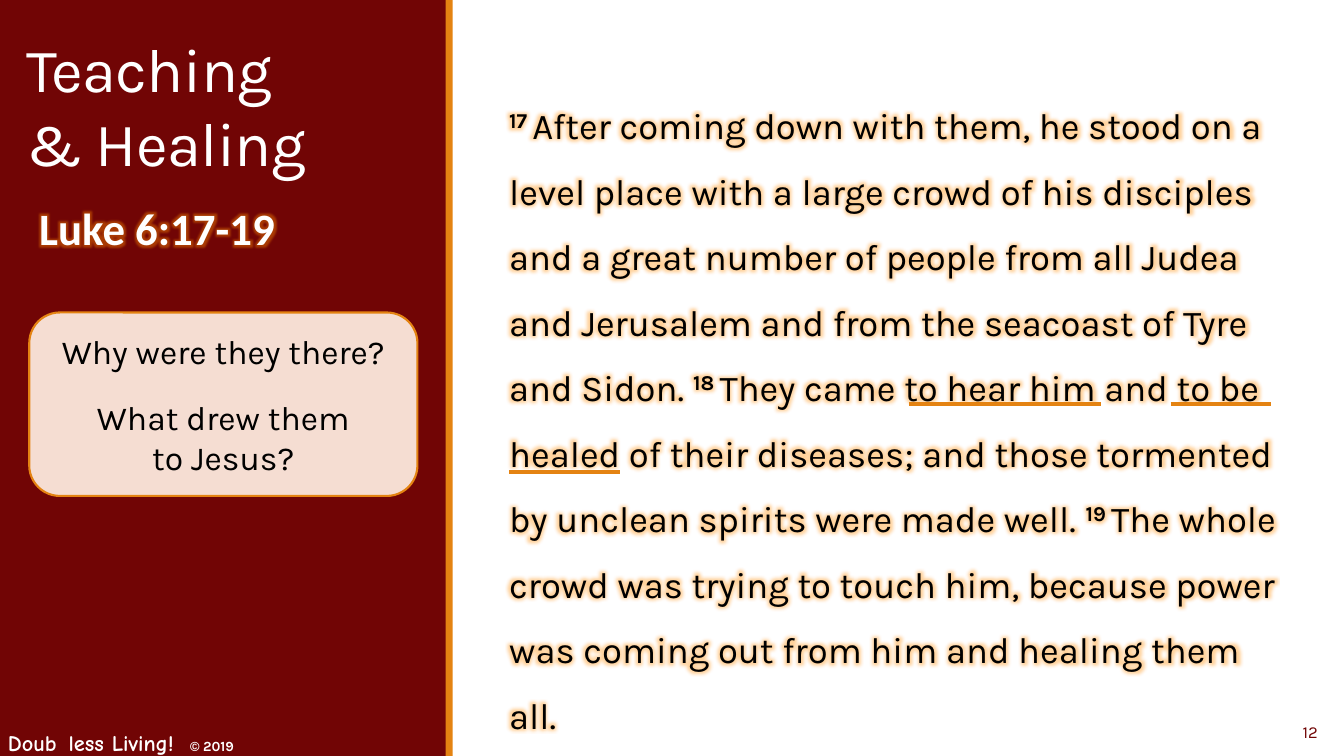
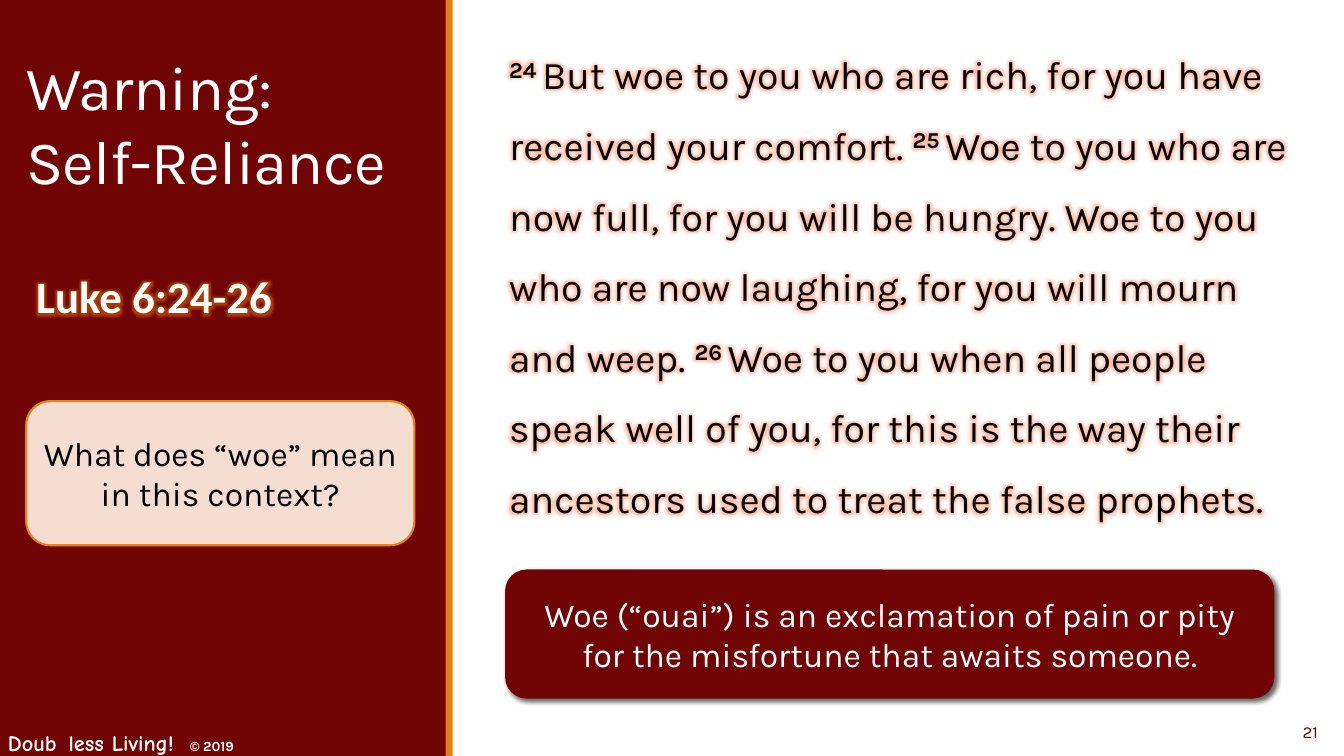
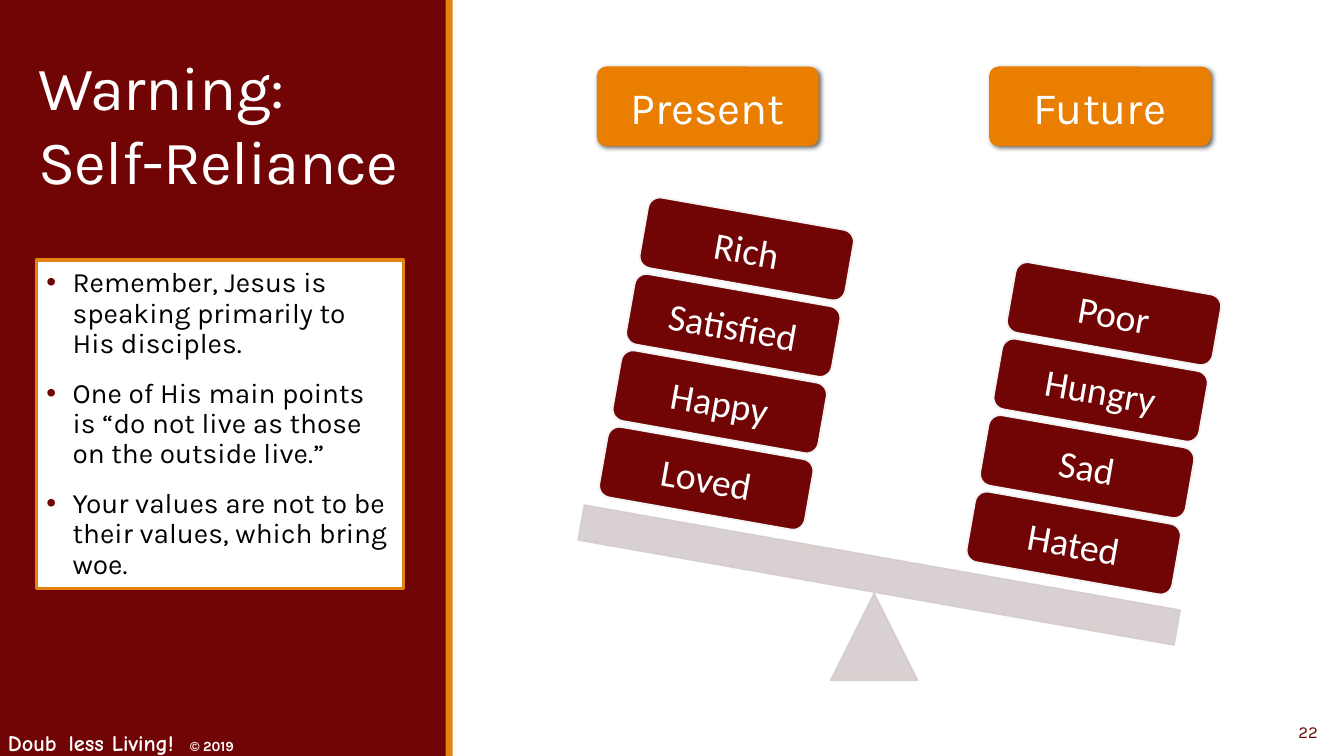
from copy import deepcopy
from math import cos, radians, sin

from lxml.etree import SubElement
from pptx import Presentation
from pptx.dml.color import RGBColor
from pptx.enum.shapes import MSO_CONNECTOR, MSO_SHAPE
from pptx.enum.text import MSO_ANCHOR, MSO_AUTO_SIZE, PP_ALIGN
from pptx.oxml.ns import qn
from pptx.util import Inches, Pt

MAROON, ORANGE, HEADER, BLUSH = "710505", "E48312", "EA7E00", "F5DDD2"
GREY, PALE, WHITE, BLACK = "D5CCCC", "F2F2F2", "FFFFFF", "000000"
GLOW_ORANGE, GLOW_RED = "FF8C00", "FF5A1E"
WIDTH, HEIGHT, PANEL = 13.33, 7.5, 4.43
TILT, BLOCK_STEP, STACK_STEP = 10, 0.77, 3.7
FOOTER = [("Doub", 16, "Comic Neue"), (" ", 24, "Comic Neue"),
          ("less Living!  ", 16, "Comic Neue"), ("© 2019", 10, "Karla")]

PASSAGES = [
    {"number": "12", "title": "Teaching\v& Healing", "title_box": (0.16, 0.26, 3.97, 1.58),
     "reference": "Luke 6:17-19", "reference_box": (0.29, 1.94, 3.85, 0.64),
     "questions": ["Why were they there?", "What drew them\vto Jesus?"],
     "question_box": (0.29, 3.1, 3.85, 1.82),
     "verse_box": (5.05, 0.76, 7.65, 5.97), "size": 26, "glow": GLOW_ORANGE,
     "verses": [
         ("17 ", "After coming down with them, he stood on a level place with a large crowd of "
                 "his disciples and a great number of people from all Judea and Jerusalem and "
                 "from the seacoast of Tyre and Sidon. "),
         ("18 ", "They came to hear him and to be healed of their diseases; and those tormented "
                 "by unclean spirits were made well. "),
         ("19 ", "The whole crowd was trying to touch him, because power was coming out from "
                 "him and healing them all.")],
     "underlines": [(9.02, 10.92, 4.01), (11.61, 12.61, 4.01), (5.05, 6.15, 4.68)]},
    {"number": "21", "title": "Warning:\vSelf-Reliance", "title_box": (0.16, 0.44, 3.97, 2.07),
     "reference": "Luke 6:24-26", "reference_box": (0.26, 2.62, 3.85, 0.64),
     "questions": ["What does “woe” mean in this context?"],
     "question_box": (0.26, 3.98, 3.85, 1.43),
     "verse_box": (5.05, 0.22, 7.84, 6.91), "size": 28, "glow": GLOW_RED,
     "verses": [
         ("24 ", "But woe to you who are rich, for you have received your comfort. "),
         ("25 ", "Woe to you who are now full, for you will be hungry. Woe to you who are now "
                 "laughing, for you will mourn and weep. "),
         ("26 ", "Woe to you when all people speak well of you, for this is the way their "
                 "ancestors used to treat the false prophets.")],
     "note": "Woe (“ouai”) is an exclamation of pain or pity for the misfortune that awaits "
             "someone."},
]
BALANCE = {
    "number": "22", "title": "Warning:\vSelf-Reliance", "title_box": (0.28, 0.44, 3.85, 2.07),
    "points": ["Remember, Jesus is speaking primarily to \vHis disciples.",
               "One of His main points is “do not live as those on the outside live.”",
               "Your values are not to be their values, which bring woe."],
    "stacks": [("Present", 5.92, ["Loved", "Happy", "Satisfied", "Rich"]),
               ("Future", 9.81, ["Hated", "Sad", "Hungry", "Poor"])],
}


def rgb(value):
    return RGBColor.from_string(value)


def inches(box):
    return [Inches(length) for length in box]


def style_run(run, size, color, font="Karla", bold=False, glow=None):
    run.font.size, run.font.name, run.font.bold = Pt(size), font, bold
    run.font.color.rgb = rgb(color)
    if glow:
        effects = SubElement(run._r.rPr, qn("a:effectLst"))
        halo = SubElement(effects, qn("a:glow"), rad=str(Pt(8)))
        halo_color = SubElement(halo, qn("a:srgbClr"), val=glow)
        SubElement(halo_color, qn("a:alpha"), val="40000")
        run._r.rPr.find(qn("a:solidFill")).addnext(effects)


def style_paragraph(paragraph, size, color, align=PP_ALIGN.LEFT, **options):
    paragraph.alignment = align
    for run in paragraph.runs:
        style_run(run, size, color, **options)
    for line_break in paragraph._p.findall(qn("a:br")):
        line_break.append(deepcopy(paragraph.runs[0]._r.rPr))


def prepare_frame(shape, anchor=MSO_ANCHOR.TOP):
    frame = shape.text_frame
    frame.word_wrap, frame.auto_size = True, MSO_AUTO_SIZE.NONE
    frame.vertical_anchor = anchor
    return frame


def place(shape, box):
    shape.left, shape.top, shape.width, shape.height = inches(box)


def add_text(slide, box, text, size, color, anchor=MSO_ANCHOR.TOP, **options):
    frame = prepare_frame(slide.shapes.add_textbox(*inches(box)), anchor)
    frame.text = text
    style_paragraph(frame.paragraphs[0], size, color, **options)


def add_box(slide, box, fill, line=None, width=1.25, kind=MSO_SHAPE.ROUNDED_RECTANGLE,
            rotation=0):
    shape = slide.shapes.add_shape(kind, *inches(box))
    shape.shadow.inherit = False
    shape.rotation = rotation
    shape.fill.solid()
    shape.fill.fore_color.rgb = rgb(fill)
    if line:
        shape.line.color.rgb = rgb(line)
        shape.line.width = Pt(width)
    else:
        shape.line.fill.background()
    return shape


def fill_box(shape, texts, size, color, font="Karla"):
    frame = prepare_frame(shape, MSO_ANCHOR.MIDDLE)
    frame.text = "\n".join(texts)
    for index, paragraph in enumerate(frame.paragraphs):
        style_paragraph(paragraph, size, color, PP_ALIGN.CENTER, font=font)
        paragraph.space_before = Pt(18 if index else 0)


def cast_shadow(shape):
    effects = shape.element.spPr.find(qn("a:effectLst"))
    shadow = SubElement(effects, qn("a:outerShdw"), blurRad=str(Pt(3.5)), dist=str(Pt(2)),
                        dir="2700000", algn="tl", rotWithShape="0")
    color = SubElement(shadow, qn("a:srgbClr"), val=BLACK)
    SubElement(color, qn("a:alpha"), val="60000")


def build_layout(presentation, layout):
    """Put the side panel, its edge and the footer on the layout that all slides use."""
    slide = presentation.slides[0]
    add_box(slide, (0, 0, PANEL, HEIGHT), MAROON, kind=MSO_SHAPE.RECTANGLE)
    add_box(slide, (PANEL - 0.01, 0, 0.07, HEIGHT), ORANGE, kind=MSO_SHAPE.RECTANGLE)
    footer = slide.shapes.add_textbox(*inches((-0.02, 7.07, 3.92, 0.5)))
    paragraph = prepare_frame(footer).paragraphs[0]
    for text, size, font in FOOTER:
        run = paragraph.add_run()
        run.text = text
        style_run(run, size, WHITE, font, True)
    for shape in list(slide.shapes)[-3:]:
        layout.shapes.element.append(shape.element)


def add_heading(slide, content):
    title = slide.shapes.title
    place(title, content["title_box"])
    frame = prepare_frame(title)
    frame.text = content["title"]
    for run in frame.paragraphs[0].runs:
        run._r.get_or_add_rPr().set("spc", "-50")
    style_paragraph(frame.paragraphs[0], 44, WHITE)
    add_text(slide, (11.82, 7.06, 1.35, 0.4), content["number"], 12, MAROON,
             MSO_ANCHOR.MIDDLE, align=PP_ALIGN.RIGHT)


def add_verses(slide, content):
    body = slide.placeholders[1]
    place(body, content["verse_box"])
    frame = prepare_frame(body)
    frame.margin_left = frame.margin_right = 0
    paragraph = frame.paragraphs[0]
    properties = paragraph._p.get_or_add_pPr()
    properties.set("marL", "0")
    properties.set("indent", "0")
    SubElement(properties, qn("a:buNone"))
    paragraph.line_spacing, paragraph.space_before = 1.5, Pt(0)
    for number, verse in content["verses"]:
        for text, is_number in ((number, True), (verse, False)):
            run = paragraph.add_run()
            run.text = text
            style_run(run, content["size"], BLACK, bold=is_number, glow=content["glow"])
            if is_number:
                run._r.rPr.set("baseline", "30000")


def build_passage(slide, content):
    add_heading(slide, content)
    add_verses(slide, content)
    add_text(slide, content["reference_box"], content["reference"], 32, WHITE,
             font="Calibri", bold=True, glow=GLOW_ORANGE)
    fill_box(add_box(slide, content["question_box"], BLUSH, ORANGE, 1.5),
             content["questions"], 24, BLACK)
    for start, end, height in content.get("underlines", []):
        line = slide.shapes.add_connector(MSO_CONNECTOR.STRAIGHT,
                                          *inches((start, height, end, height)))
        line.line.color.rgb = rgb(ORANGE)
        line.line.width = Pt(3)
        SubElement(line.element.spPr, qn("a:effectLst"))
    if "note" in content:
        note = add_box(slide, (5.01, 5.65, 7.63, 1.28), MAROON)
        cast_shadow(note)
        fill_box(note, [content["note"]], 24, WHITE)


def add_points(slide, points):
    body = slide.placeholders[1]
    place(body, (0.36, 2.58, 3.64, 3.26))
    body.fill.solid()
    body.fill.fore_color.rgb = rgb(WHITE)
    body.line.color.rgb = rgb(ORANGE)
    body.line.width = Pt(2.25)
    frame = prepare_frame(body, MSO_ANCHOR.MIDDLE)
    frame.text = "\n".join(points)
    for index, paragraph in enumerate(frame.paragraphs):
        properties = paragraph._p.get_or_add_pPr()
        properties.set("marL", str(Inches(0.26)))
        properties.set("indent", str(-Inches(0.26)))
        bullet_color = SubElement(properties, qn("a:buClr"))
        SubElement(bullet_color, qn("a:srgbClr"), val=MAROON)
        SubElement(properties, qn("a:buChar"), char="•")
        paragraph.line_spacing = 0.9
        paragraph.space_before, paragraph.space_after = Pt(12 if index else 0), Pt(2)
        style_paragraph(paragraph, 20, BLACK)


def build_balance(slide, content):
    add_heading(slide, content)
    add_points(slide, content["points"])
    for kind, box, rotation in ((MSO_SHAPE.ISOSCELES_TRIANGLE, (8.24, 5.89, 0.86, 0.86), 0),
                                (MSO_SHAPE.RECTANGLE, (5.72, 5.53, 6, 0.35), TILT)):
        part = add_box(slide, box, GREY, GREY, kind=kind, rotation=rotation)
        for color in part.element.spPr.iter(qn("a:srgbClr")):
            SubElement(color, qn("a:alpha"), val="90000")
    across, up = sin(radians(TILT)), cos(radians(TILT))
    for column, (heading, left, labels) in enumerate(content["stacks"]):
        header = add_box(slide, (left, 0.66, 2.2, 0.79), HEADER)
        header.adjustments[0] = 0.12
        cast_shadow(header)
        fill_box(header, [heading], 32, WHITE)
        for row, label in enumerate(labels):
            along, rise = column * STACK_STEP, row * BLOCK_STEP
            block_left = 5.97 + along * up + rise * across
            block_top = 4.39 + along * across - rise * up
            block = add_box(slide, (block_left, block_top, 2.07, 0.71), MAROON, PALE,
                            rotation=TILT)
            fill_box(block, [label], 27, WHITE, "Calibri")


def main():
    presentation = Presentation()
    presentation.slide_width, presentation.slide_height = Inches(WIDTH), Inches(HEIGHT)
    layout = presentation.slide_layouts[1]
    slides = [presentation.slides.add_slide(layout) for _ in range(len(PASSAGES) + 1)]
    build_layout(presentation, layout)
    for slide, content in zip(slides, PASSAGES):
        build_passage(slide, content)
    build_balance(slides[-1], BALANCE)
    presentation.save("out.pptx")


if __name__ == "__main__":
    main()
